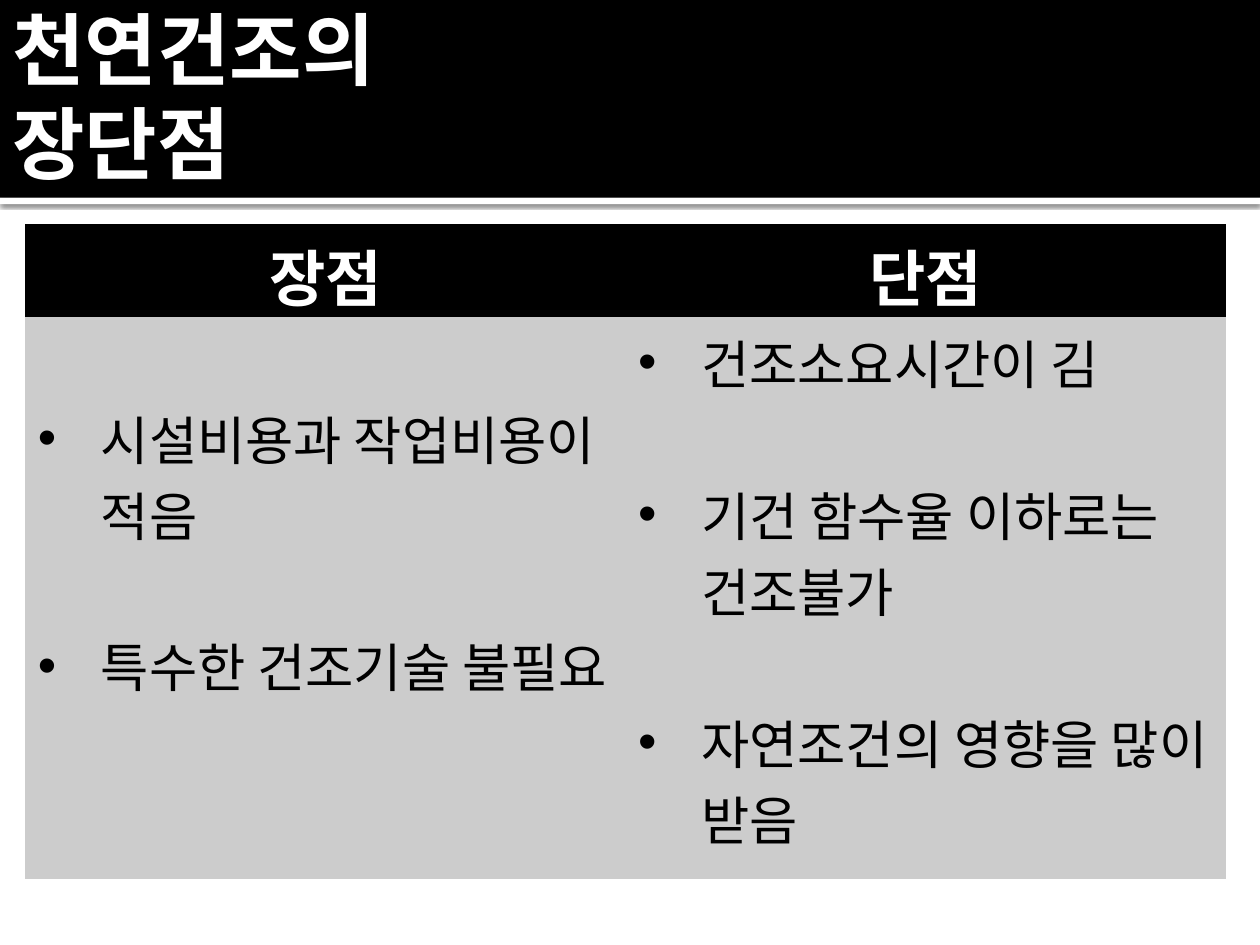
from lxml.etree import SubElement
from pptx import Presentation
from pptx.dml.color import RGBColor
from pptx.enum.shapes import MSO_SHAPE
from pptx.enum.text import MSO_ANCHOR, PP_ALIGN
from pptx.oxml.ns import qn
from pptx.util import Inches, Pt

BLACK = RGBColor(0, 0, 0)
WHITE = RGBColor(255, 255, 255)
GREY = RGBColor(0xCC, 0xCC, 0xCC)
FONT = "Noto Sans CJK KR"
LINE = 0.6
INDENT = Inches(0.5)
BAND_HEIGHT = 1.57
COLUMNS = [
    ("장점", ["시설비용과 작업비용이 적음", "특수한 건조기술 불필요"], 0.05 + LINE, 0.05 + 2 * LINE),
    ("단점", ["건조소요시간이 김", "기건 함수율 이하로는 건조불가", "자연조건의 영향을 많이 받음"], 0.05, 0.05),
]


def style(paragraph, size, color, bold=False):
    """Set the font of a paragraph for Latin and Korean letters."""
    font = paragraph.font
    font.size, font.bold, font.name = Pt(size), bold, FONT
    font.color.rgb = color
    defaults = paragraph._p.pPr.find(qn("a:defRPr"))
    SubElement(defaults, qn("a:ea"), typeface=FONT)


def add_bar(slide, top, height, color):
    """Add a plain bar across the whole slide."""
    bar = slide.shapes.add_shape(MSO_SHAPE.RECTANGLE, 0, Inches(top), Inches(10), Inches(height))
    bar.fill.solid()
    bar.fill.fore_color.rgb = color
    bar.line.fill.background()
    bar.shadow.inherit = False
    return bar


def add_shadow(bar):
    """Cast a soft shadow below a bar."""
    effects = bar._element.spPr.find(qn("a:effectLst"))
    shadow = SubElement(effects, qn("a:outerShdw"), blurRad=str(Pt(2.5)), dist=str(Pt(0.8)),
                        dir="5400000", algn="tl", rotWithShape="0")
    color = SubElement(shadow, qn("a:srgbClr"), val=str(BLACK))
    SubElement(color, qn("a:alpha"), val="60000")


def add_title(slide, text):
    """Add the title over the band."""
    frame = slide.shapes.add_textbox(0, Inches(0.13), Inches(3.12), Inches(1.25)).text_frame
    frame.word_wrap = True
    frame.vertical_anchor = MSO_ANCHOR.MIDDLE
    frame.margin_right = Inches(0.05)
    title = frame.paragraphs[0]
    title.text = text
    style(title, 45, WHITE, bold=True)


def fill_cell(cell, color):
    """Give a cell a solid fill."""
    cell.fill.solid()
    cell.fill.fore_color.rgb = color


def fill_heading(cell, text):
    """Write a column heading."""
    fill_cell(cell, BLACK)
    heading = cell.text_frame.paragraphs[0]
    heading.text = text
    heading.alignment = PP_ALIGN.CENTER
    style(heading, 35, WHITE, bold=True)


def fill_bullets(cell, points, top, bottom):
    """Write bulleted points one line apart."""
    fill_cell(cell, GREY)
    cell.margin_top, cell.margin_bottom = Inches(top), Inches(bottom)
    frame = cell.text_frame
    for index, text in enumerate(points):
        point = frame.add_paragraph() if index else frame.paragraphs[0]
        point.text = text
        if index:
            point.space_before = Inches(LINE)
        properties = point._p.get_or_add_pPr()
        properties.set("marL", str(INDENT))
        properties.set("indent", str(-INDENT))
        SubElement(properties, qn("a:buFont"), typeface="Arial")
        SubElement(properties, qn("a:buChar"), char="•")
        style(point, 30, BLACK)


def add_comparison(slide):
    """Add the table of advantages and drawbacks."""
    table = slide.shapes.add_table(2, len(COLUMNS), Inches(0.2), Inches(1.78),
                                   Inches(9.53), Inches(5.2)).table
    table.horz_banding = False
    table.rows[0].height, table.rows[1].height = Inches(0.74), Inches(4.46)
    for column, (heading, points, top, bottom) in enumerate(COLUMNS):
        fill_heading(table.cell(0, column), heading)
        fill_bullets(table.cell(1, column), points, top, bottom)
    style_id = table._tbl.tblPr.find(qn("a:tableStyleId"))
    style_id.text = "{2D5ABB26-0587-4C30-8999-92F81FD0307C}"


def main():
    """Build the slide and save it."""
    deck = Presentation()
    deck.slide_width, deck.slide_height = Inches(10), Inches(7.5)
    slide = deck.slides.add_slide(deck.slide_layouts[6])
    add_shadow(add_bar(slide, BAND_HEIGHT, 0.05, WHITE))
    add_bar(slide, 0, BAND_HEIGHT, BLACK)
    add_title(slide, "천연건조의 장단점")
    add_comparison(slide)
    deck.save("out.pptx")


if __name__ == "__main__":
    main()
